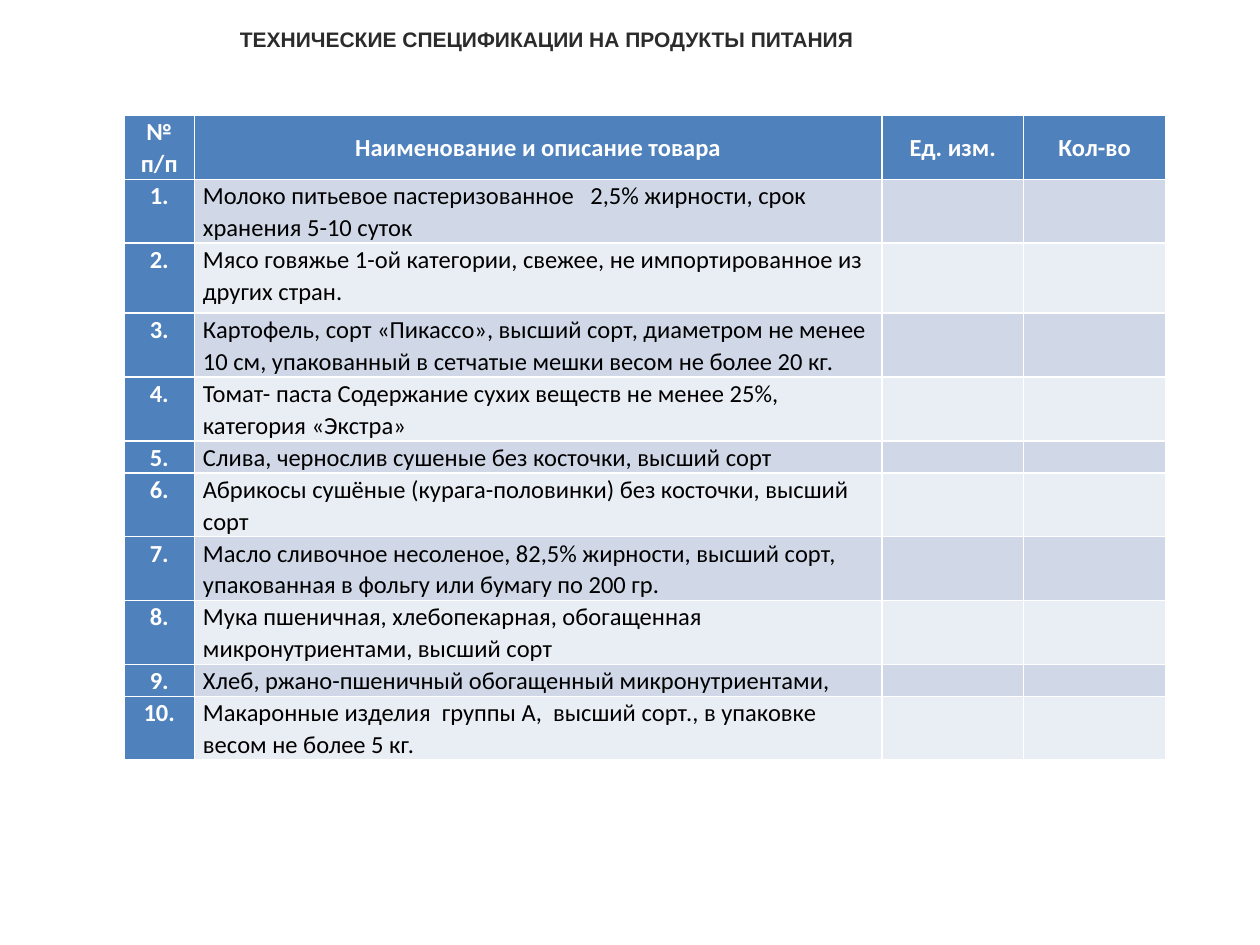
"""Build a slide with a table of food product specifications."""
from pptx import Presentation
from pptx.dml.color import RGBColor
from pptx.enum import text
from pptx.util import Pt

WHITE = RGBColor(0xFF, 0xFF, 0xFF)
BLACK = RGBColor(0, 0, 0)
DARK = RGBColor(0x2B, 0x2B, 0x2B)
BLUE = RGBColor(0x4F, 0x81, 0xBD)
BANDS = [RGBColor(0xD0, 0xD8, 0xE8), RGBColor(0xE9, 0xED, 0xF4)]

HEADER = ["№ п/п", "Наименование и описание товара", "Ед. изм.", "Кол-во"]
PRODUCTS = [
    "Молоко питьевое пастеризованное   2,5% жирности, срок хранения 5-10 суток",
    "Мясо говяжье 1-ой категории, свежее, не импортированное из\nдругих стран.",
    "Картофель, сорт «Пикассо», высший сорт, диаметром не менее 10 см, "
    "упакованный в сетчатые мешки весом не более 20 кг.",
    "Томат- паста Содержание сухих веществ не менее 25%, категория «Экстра»",
    "Слива, чернослив сушеные без косточки, высший сорт",
    "Абрикосы сушёные (курага-половинки) без косточки, высший сорт",
    "Масло сливочное несоленое, 82,5% жирности, высший сорт, "
    "упакованная в фольгу или бумагу по 200 гр.",
    "Мука пшеничная, хлебопекарная, обогащенная микронутриентами, высший сорт",
    "Хлеб, ржано-пшеничный обогащенный микронутриентами,",
    "Макаронные изделия  группы А,  высший сорт., в упаковке весом не более 5 кг.",
]
ROWS = [HEADER] + [[f"{i}.", name, "", ""] for i, name in enumerate(PRODUCTS, 1)]
COL_WIDTHS = [40, 393, 81, 81]
ROW_HEIGHTS = [36.5, 36.5, 40, 36.5, 36.5, 18, 36.5, 36.5, 36.5, 18, 36.5]


def format_paragraph(p, name, size, color, bold, align):
    p.alignment = align
    p.font.name = name
    p.font.size = Pt(size)
    p.font.color.rgb = color
    p.font.bold = bold


prs = Presentation()
prs.slide_width, prs.slide_height = Pt(720), Pt(540)
s = prs.slides.add_slide(prs.slide_layouts[5])

title = s.shapes.title
title.left, title.top, title.width, title.height = Pt(115), Pt(12.5), Pt(380), Pt(20)
title.fill.solid()
title.fill.fore_color.rgb = WHITE
tf = title.text_frame
tf.text = "ТЕХНИЧЕСКИЕ СПЕЦИФИКАЦИИ НА ПРОДУКТЫ ПИТАНИЯ"
tf.word_wrap = False
tf.vertical_anchor = text.MSO_ANCHOR.MIDDLE
tf.margin_left = tf.margin_right = Pt(5)
tf.margin_top = tf.margin_bottom = Pt(3)
p = tf.paragraphs[0]
format_paragraph(p, "Arial", 12, DARK, True, text.PP_ALIGN.CENTER)
p._p.get_or_add_pPr().set("indent", str(Pt(15)))

table = s.shapes.add_table(
    len(ROWS), len(HEADER), Pt(71), Pt(66), Pt(sum(COL_WIDTHS)), Pt(sum(ROW_HEIGHTS))
).table
table.first_col = True
for column, width in zip(table.columns, COL_WIDTHS):
    column.width = Pt(width)

for r, values in enumerate(ROWS):
    table.rows[r].height = Pt(ROW_HEIGHTS[r])
    for c, value in enumerate(values):
        heading = r == 0 or c == 0
        cell = table.cell(r, c)
        cell.text = value
        cell.margin_left = cell.margin_right = Pt(5)
        cell.margin_top = cell.margin_bottom = Pt(0)
        cell.vertical_anchor = text.MSO_ANCHOR.MIDDLE if r == 0 else text.MSO_ANCHOR.TOP
        cell.fill.solid()
        cell.fill.fore_color.rgb = BLUE if heading else BANDS[(r - 1) % 2]
        for p in cell.text_frame.paragraphs:
            p.line_spacing = 1.07
            format_paragraph(
                p, "Calibri", 14, WHITE if heading else BLACK, heading,
                text.PP_ALIGN.CENTER if heading else text.PP_ALIGN.LEFT,
            )

prs.save("out.pptx")
